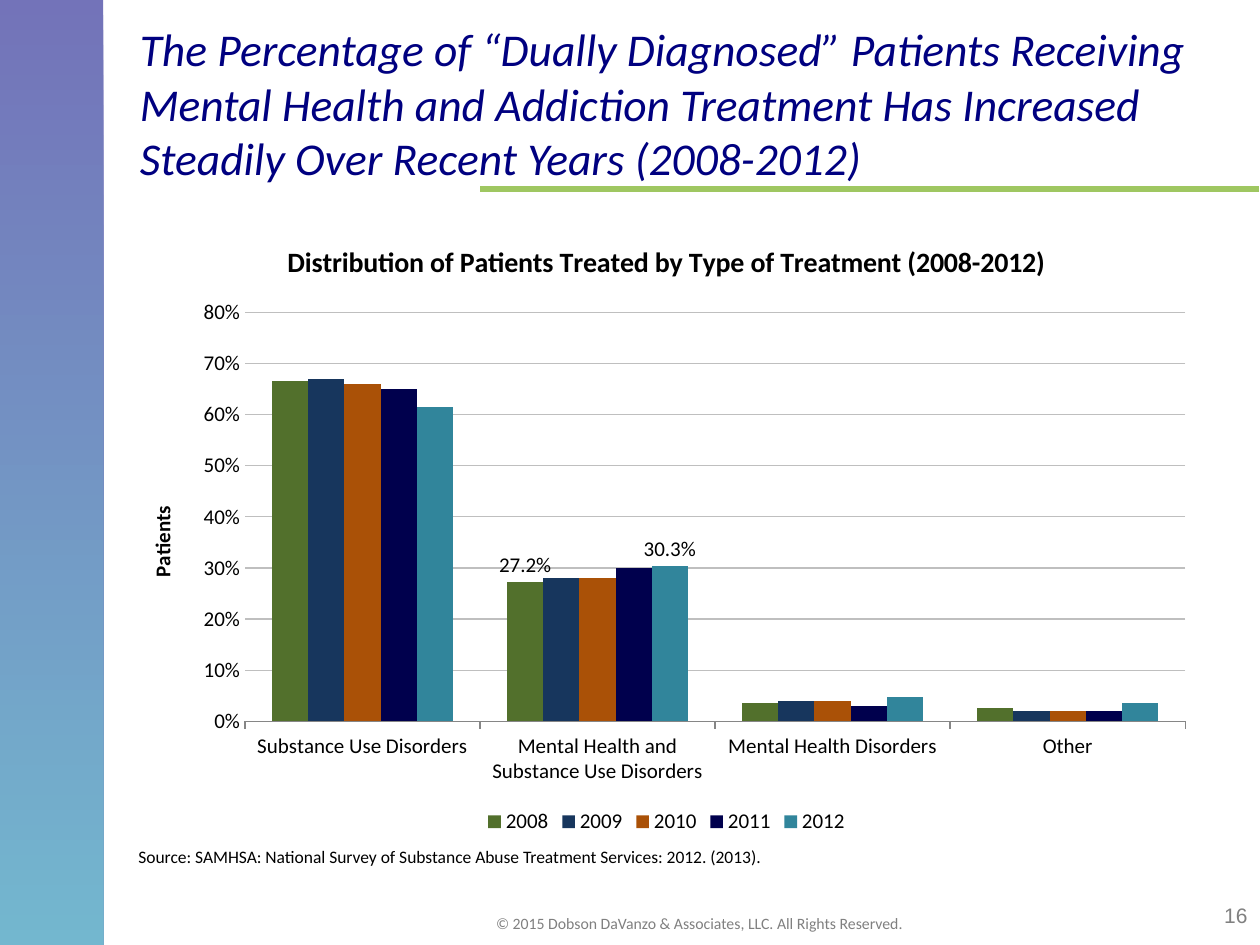
import lxml.etree
import pptx
import pptx.chart.data
import pptx.dml.color
import pptx.enum.chart
import pptx.enum.shapes
import pptx.enum.text
import pptx.oxml
import pptx.oxml.ns
import pptx.util
from pptx.util import Cm

qn = pptx.oxml.ns.qn
ALIGN = pptx.enum.text.PP_ALIGN
ANCHOR = pptx.enum.text.MSO_ANCHOR
CHART = pptx.enum.chart

COLORS = {
    "navy": "000080", "teal": "007DA8", "green": "9FC761", "gray": "808080",
    "black": "000000", "grid": "BFBFBF", "axis": "868686",
}
CATEGORIES = ["Substance Use Disorders", "Mental Health and Substance Use Disorders",
              "Mental Health Disorders", "Other"]
# year: (shares by category, bar colour)
YEARS = {
    "2008": ((0.666, 0.272, 0.036, 0.026), "52702C"),
    "2009": ((0.67, 0.28, 0.04, 0.02), "17365D"),
    "2010": ((0.66, 0.28, 0.04, 0.02), "AA5107"),
    "2011": ((0.65, 0.3, 0.03, 0.02), "00004D"),
    "2012": ((0.614, 0.303, 0.048, 0.035), "31859B"),
}
LABELED_YEARS = ("2008", "2012")
LABELED_CATEGORY = 1


def rgb(value):
    return pptx.dml.color.RGBColor.from_string(value)


def apply_format(target, values):
    for name, value in values.items():
        setattr(target, name, value)


def style_font(font, size, color="black", face="Calibri", **extra):
    apply_format(font, {"name": face, "size": pptx.util.Pt(size), **extra})
    font.color.rgb = rgb(COLORS[color])


def add_text(slide, box, text, font, align=ALIGN.LEFT, anchor=ANCHOR.TOP):
    frame = slide.shapes.add_textbox(*map(Cm, box)).text_frame
    apply_format(frame, {"word_wrap": True, "vertical_anchor": anchor})
    paragraph = frame.paragraphs[0]
    paragraph.alignment = align
    run = paragraph.add_run()
    run.text = text
    style_font(run.font, **font)


def add_side_band(slide):
    band = slide.shapes.add_shape(
        pptx.enum.shapes.MSO_SHAPE.RECTANGLE, 0, 0, Cm(2.08), Cm(19.05))
    band.shadow.inherit = False
    band.line.fill.background()
    band.fill.gradient()
    band.fill.gradient_angle = 270
    for stop, position, color in zip(band.fill.gradient_stops, (0, 1), ("navy", "teal")):
        stop.position = position
        stop.color.rgb = rgb(COLORS[color])
    for color in band.element.spPr.find(qn("a:gradFill")).iter(qn("a:srgbClr")):
        lxml.etree.SubElement(color, qn("a:alpha")).set("val", "55000")


def add_title_rule(slide):
    rule = slide.shapes.add_connector(
        pptx.enum.shapes.MSO_CONNECTOR.STRAIGHT, Cm(9.68), Cm(3.81), Cm(25.37), Cm(3.81))
    rule.line.color.rgb = rgb(COLORS["green"])
    rule.line.width = pptx.util.Pt(3)
    lxml.etree.SubElement(rule.element.spPr, qn("a:effectLst"))


def set_heading(owner, text, size):
    """Give a chart or an axis a bold title."""
    owner.has_title = True
    title = owner.chart_title if hasattr(owner, "chart_title") else owner.axis_title
    run = title.text_frame.paragraphs[0].add_run()
    run.text = text
    style_font(run.font, size, bold=True)


def place_plot(chart, **fractions):
    """Fix the inner plot area, in fractions of the chart."""
    plot_area = chart._chartSpace.chart.plotArea
    for old in plot_area.findall(qn("c:layout")):
        plot_area.remove(old)
    layout = lxml.etree.Element(qn("c:layout"))
    manual = lxml.etree.SubElement(layout, qn("c:manualLayout"))
    settings = {"layoutTarget": "inner", "xMode": "edge", "yMode": "edge", **fractions}
    for name, value in settings.items():
        lxml.etree.SubElement(manual, qn("c:" + name)).set("val", str(value))
    plot_area.insert(0, layout)


def label_point(series, index):
    series.data_labels.show_value = False
    label = series.points[index].data_label
    label.position = CHART.XL_LABEL_POSITION.OUTSIDE_END
    element = series.data_labels._element.find(qn("c:dLbl"))
    number_format = lxml.etree.Element(qn("c:numFmt"), formatCode="0.0%", sourceLinked="0")
    element.find(qn("c:idx")).addnext(number_format)


def style_axes(chart):
    categories, shares = chart.category_axis, chart.value_axis
    categories.major_tick_mark = CHART.XL_TICK_MARK.OUTSIDE
    categories.format.line.color.rgb = rgb(COLORS["axis"])
    apply_format(shares, {
        "minimum_scale": 0, "maximum_scale": 0.8, "major_unit": 0.1,
        "major_tick_mark": CHART.XL_TICK_MARK.NONE, "has_major_gridlines": True,
    })
    apply_format(shares.tick_labels, {"number_format": "0%", "number_format_is_linked": False})
    shares.format.line.fill.background()
    grid = shares.major_gridlines.format.line
    grid.color.rgb = rgb(COLORS["grid"])
    grid.width = pptx.util.Pt(0.75)
    set_heading(shares, "Patients", 12)


def add_treatment_chart(slide):
    data = pptx.chart.data.CategoryChartData(number_format="0%")
    data.categories = CATEGORIES
    for year, (shares, _) in YEARS.items():
        data.add_series(year, shares)
    chart = slide.shapes.add_chart(
        CHART.XL_CHART_TYPE.COLUMN_CLUSTERED,
        Cm(2.54), Cm(4.42), Cm(21.79), Cm(12.5), data).chart
    style_font(chart.font, 12)
    set_heading(chart, "Distribution of Patients Treated by Type of Treatment (2008-2012)", 16)
    chart.has_legend = True
    apply_format(chart.legend, {
        "position": CHART.XL_LEGEND_POSITION.BOTTOM, "include_in_layout": False})
    bars = chart.plots[0]
    apply_format(bars, {"gap_width": 150, "overlap": 0, "vary_by_categories": False})
    for series in bars.series:
        series.format.fill.solid()
        series.format.fill.fore_color.rgb = rgb(YEARS[series.name][1])
        if series.name in LABELED_YEARS:
            label_point(series, LABELED_CATEGORY)
    style_axes(chart)
    place_plot(chart, x=0.11, y=0.15, w=0.87, h=0.66)


def main():
    deck = pptx.Presentation()
    apply_format(deck, {"slide_width": Cm(25.4), "slide_height": Cm(19.05)})
    slide = deck.slides.add_slide(deck.slide_layouts[6])
    add_title_rule(slide)
    add_side_band(slide)
    add_text(slide, (22.66, 18.06, 2.74, 0.76), "16",
             {"size": 12, "face": "Arial", "color": "gray"}, ALIGN.RIGHT)
    add_text(slide, (8.66, 18.29, 10.87, 0.53),
             "© 2015 Dobson DaVanzo & Associates, LLC. All Rights Reserved.",
             {"size": 9, "color": "gray"}, ALIGN.CENTER)
    add_text(slide, (2.57, 0.2, 21.82, 3.76),
             "The Percentage of “Dually Diagnosed” Patients Receiving Mental Health and "
             "Addiction Treatment Has Increased Steadily Over Recent Years (2008-2012)",
             {"size": 26, "color": "navy", "italic": True}, anchor=ANCHOR.MIDDLE)
    add_text(slide, (2.54, 16.94, 13.34, 0.69),
             "Source: SAMHSA: National Survey of Substance Abuse Treatment Services: 2012. (2013).",
             {"size": 10})
    add_treatment_chart(slide)
    deck.save("out.pptx")


if __name__ == "__main__":
    main()
